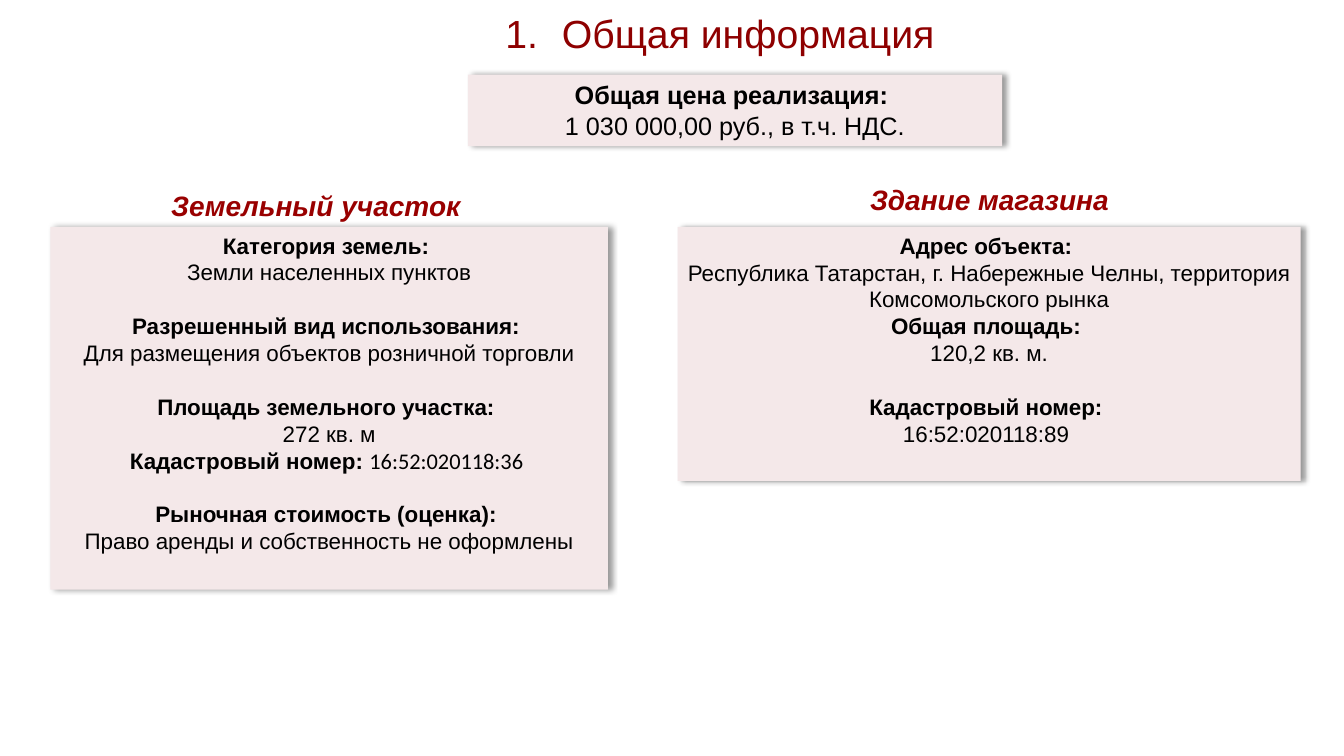
import pptx
import pptx.util
import pptx.dml.color
import pptx.enum.shapes
import pptx.enum.text
import lxml.etree

Inches, Pt = pptx.util.Inches, pptx.util.Pt
ALIGN = pptx.enum.text.PP_ALIGN
COLORS = {"title": "8E0000", "heading": "990000", "panel": "F4E8E9", "text": "000000"}
GAP = 19.2  # points between groups of lines, one line high

TITLE = "Общая информация"
# Heading: text, place, alignment
HEADINGS = [
    ("Земельный участок", (1.6, 1.82, 3.44, 0.44), ALIGN.LEFT),
    ("Здание магазина", (6.65, 1.76, 6.33, 0.44), ALIGN.CENTER),
]
# Panel: place, text size, lines; a line is (label, value, starts a new group)
PANELS = [
    ((0.5, 2.25, 5.53, 3.6), 16, [
        ("Категория земель: ", "", False),
        ("", "Земли населенных пунктов", False),
        ("Разрешенный вид использования: ", "", True),
        ("", "Для размещения объектов розничной торговли", False),
        ("Площадь земельного участка: ", "", True),
        ("", "272 кв. м", False),
        ("Кадастровый номер: ", "16:52:020118:36 ", False),
        ("Рыночная стоимость (оценка): ", "", True),
        ("", "Право аренды и собственность не оформлены", False),
    ]),
    ((6.72, 2.25, 6.18, 2.52), 16, [
        ("Адрес объекта: ", "", False),
        ("", "Республика Татарстан, г. Набережные Челны, территория Комсомольского рынка", False),
        ("Общая площадь: ", "", False),
        ("", "120,2 кв. м.", False),
        ("Кадастровый номер: ", "", True),
        ("", "16:52:020118:89 ", False),
    ]),
    ((4.64, 0.74, 5.3, 0.71), 18, [
        ("Общая цена реализация: ", "", False),
        ("", "1 030 000,00 руб., в т.ч. НДС.", False),
    ]),
]


def rgb(name):
    return pptx.dml.color.RGBColor.from_string(COLORS[name])


def add_run(p, text, size, color="text", font="Arial", bold=False, italic=False):
    r = p.add_run()
    r.text = text
    r.font.name, r.font.size = font, Pt(size)
    r.font.bold, r.font.italic = bold, italic
    r.font.color.rgb = rgb(color)


def add_text_box(slide, place, align):
    """Add a wrapping text box and return its first paragraph."""
    tf = slide.shapes.add_textbox(*map(Inches, place)).text_frame
    tf.word_wrap = True
    p = tf.paragraphs[0]
    p.alignment = align
    return p


def add_shadow(sp):
    sp.shadow.inherit = False
    effects = sp._element.spPr.find(pptx.oxml.ns.qn("a:effectLst"))
    effects.append(pptx.oxml.parse_xml(
        f'<a:outerShdw {pptx.oxml.ns.nsdecls("a")} blurRad="{Pt(4)}" dist="{Pt(3)}" '
        'dir="0" algn="l" rotWithShape="0"><a:srgbClr val="000000">'
        '<a:alpha val="40000"/></a:srgbClr></a:outerShdw>'))


def add_panel(slide, place, size, lines):
    sp = slide.shapes.add_shape(
        pptx.enum.shapes.MSO_SHAPE.RECTANGLE, *map(Inches, place))
    sp.fill.solid()
    sp.fill.fore_color.rgb = rgb("panel")
    sp.line.fill.background()
    add_shadow(sp)
    tf = sp.text_frame
    tf.word_wrap = True
    tf.vertical_anchor = pptx.enum.text.MSO_ANCHOR.TOP
    for i, (label, value, new_group) in enumerate(lines):
        p = tf.add_paragraph() if i else tf.paragraphs[0]
        p.alignment = ALIGN.CENTER
        p.line_spacing = Pt(size * 1.2)
        if new_group:
            p.space_before = Pt(GAP)
        if label:
            add_run(p, label, size, bold=True)
        if value:
            add_run(p, value, size, font="Calibri" if label else "Arial")


def add_title(slide):
    p = add_text_box(slide, (2.14, 0.1, 10, 0.51), ALIGN.CENTER)
    p.line_spacing = 0.9
    pPr = p._p.get_or_add_pPr()
    pPr.set("marL", str(Inches(0.56)))
    pPr.set("indent", str(-Inches(0.56)))
    number = lxml.etree.SubElement(pPr, pptx.oxml.ns.qn("a:buAutoNum"))
    number.set("type", "arabicPeriod")
    add_run(p, TITLE, 28, color="title")


def main():
    prs = pptx.Presentation()
    prs.slide_width, prs.slide_height = Inches(13.33), Inches(7.5)
    slide = prs.slides.add_slide(prs.slide_layouts[6])
    add_title(slide)
    for place, size, lines in PANELS:
        add_panel(slide, place, size, lines)
    for text, place, align in HEADINGS:
        p = add_text_box(slide, place, align)
        add_run(p, text, 20, color="heading", bold=True, italic=True)
    prs.save("out.pptx")


if __name__ == "__main__":
    main()
